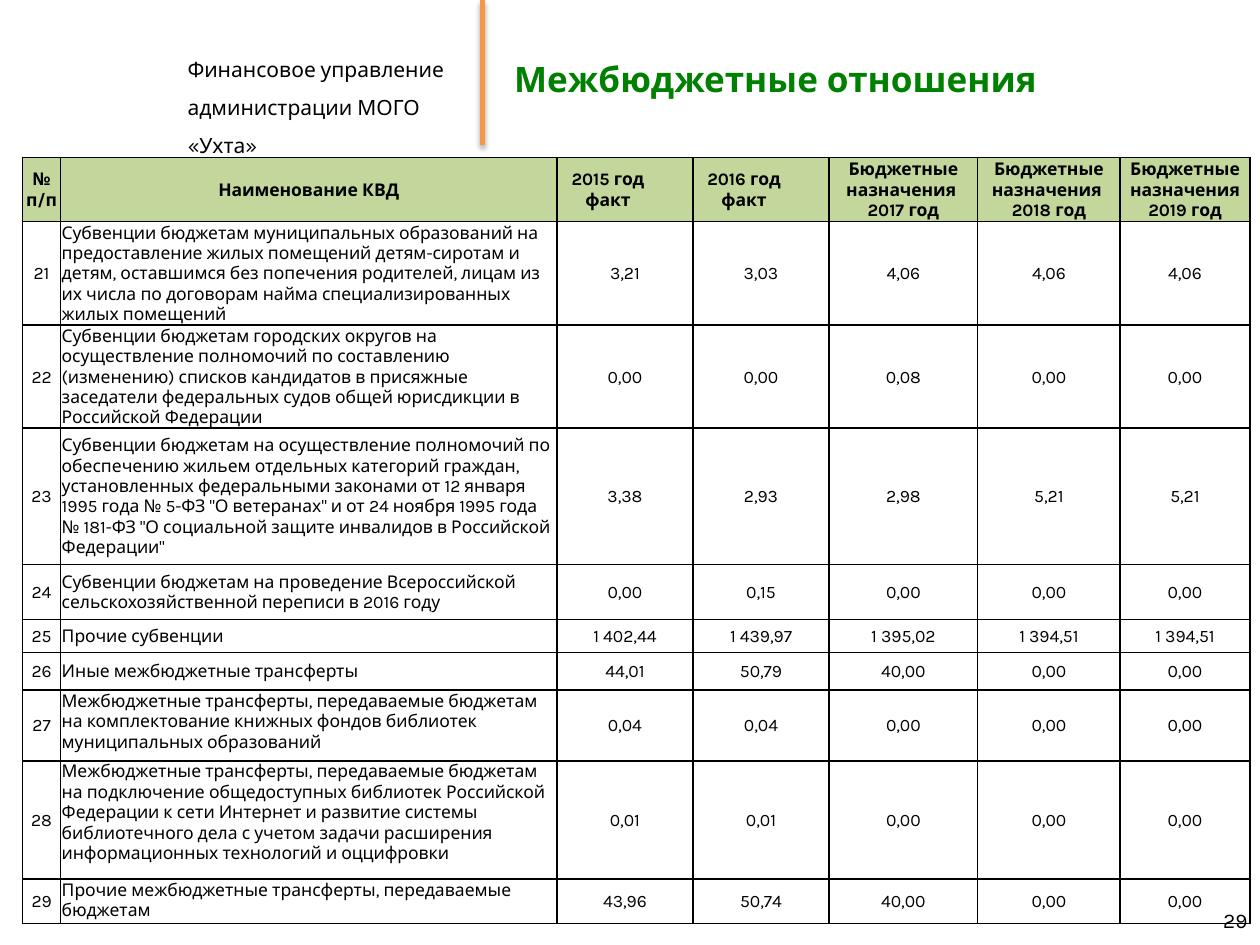
from lxml import etree
from pptx import Presentation
from pptx.dml.color import RGBColor
from pptx.enum.shapes import MSO_CONNECTOR
from pptx.enum.text import MSO_ANCHOR, MSO_AUTO_SIZE, PP_ALIGN
from pptx.oxml import parse_xml
from pptx.oxml.ns import nsdecls, qn
from pptx.util import Inches, Pt

FONT = "Karla"
COLORS = {"text": "000000", "title": "008000", "accent": "F79646",
          "header": "C3D69B", "border": "000000"}

COLUMN_WIDTHS = [0.3, 3.94, 1.08, 1.08, 1.18, 1.13, 1.03]
ROW_HEIGHTS = [0.51, 0.75, 0.79, 1.08, 0.44, 0.26, 0.3, 0.56, 0.94, 0.35]
HEADERS = [
    ["№ п/п"],
    ["Наименование КВД"],
    ["2015 год", "факт"],
    ["2016 год", "факт"],
    ["Бюджетные назначения ", "2017 год"],
    ["Бюджетные назначения ", "2018 год"],
    ["Бюджетные назначения 2019 год"],
]
FACT_COLUMNS = (2, 3)
FIRST_NUMBER = 21
FIRST_TOP_ANCHORED = 27
ROWS = [
    ("Субвенции бюджетам муниципальных образований на предоставление жилых "
     "помещений детям-сиротам и детям, оставшимся без попечения родителей, "
     "лицам из их числа по договорам найма специализированных жилых помещений",
     ["3,21", "3,03", "4,06", "4,06", "4,06"]),
    ("Субвенции бюджетам городских округов на осуществление полномочий по "
     "составлению (изменению) списков кандидатов в присяжные заседатели "
     "федеральных судов общей юрисдикции в Российской Федерации",
     ["0,00", "0,00", "0,08", "0,00", "0,00"]),
    ("Субвенции бюджетам на осуществление полномочий по обеспечению жильем "
     "отдельных категорий граждан, установленных федеральными законами от "
     "12 января 1995 года № 5-ФЗ \"О ветеранах\" и от 24 ноября 1995 года "
     "№ 181-ФЗ \"О социальной защите инвалидов в Российской Федерации\"",
     ["3,38", "2,93", "2,98", "5,21", "5,21"]),
    ("Субвенции бюджетам на проведение Всероссийской сельскохозяйственной "
     "переписи в 2016 году",
     ["0,00", "0,15", "0,00", "0,00", "0,00"]),
    ("Прочие субвенции",
     ["1 402,44", "1 439,97", "1 395,02", "1 394,51", "1 394,51"]),
    ("Иные межбюджетные трансферты",
     ["44,01", "50,79", "40,00", "0,00", "0,00"]),
    ("Межбюджетные трансферты, передаваемые бюджетам на комплектование "
     "книжных фондов библиотек муниципальных образований",
     ["0,04", "0,04", "0,00", "0,00", "0,00"]),
    ("Межбюджетные трансферты, передаваемые бюджетам на подключение "
     "общедоступных библиотек Российской Федерации к сети Интернет и развитие "
     "системы библиотечного дела с учетом задачи расширения информационных "
     "технологий и оццифровки",
     ["0,01", "0,01", "0,00", "0,00", "0,00"]),
    ("Прочие межбюджетные трансферты, передаваемые бюджетам",
     ["43,96", "50,74", "40,00", "0,00", "0,00"]),
]


def write(frame, lines, size, color="text", bold=False,
          align=PP_ALIGN.LEFT, spacing=None):
    for index, line in enumerate(lines):
        para = frame.paragraphs[0] if index == 0 else frame.add_paragraph()
        para.alignment = align
        if spacing:
            para.line_spacing = spacing
        span = para.add_run()
        span.text = line
        span.font.name = FONT
        span.font.size = Pt(size)
        span.font.bold = bold
        span.font.color.rgb = RGBColor.from_string(COLORS[color])


def add_text(page, left, top, width, height, lines, anchor, **style):
    box = page.shapes.add_textbox(Inches(left), Inches(top),
                                  Inches(width), Inches(height))
    frame = box.text_frame
    frame.word_wrap = True
    frame.auto_size = MSO_AUTO_SIZE.NONE
    frame.vertical_anchor = anchor
    write(frame, lines, 12, **style)


def add_divider(page, left, top, height):
    line = page.shapes.add_connector(
        MSO_CONNECTOR.STRAIGHT, Inches(left), Inches(top),
        Inches(left), Inches(top + height))
    line.line.color.rgb = RGBColor.from_string(COLORS["accent"])
    line.line.width = Pt(3)
    line._element.spPr.append(parse_xml(
        f'<a:effectLst {nsdecls("a")}>'
        f'<a:outerShdw blurRad="{Pt(3.1)}" dist="{Pt(1.8)}" dir="5400000" '
        'rotWithShape="0"><a:srgbClr val="000000"><a:alpha val="35000"/>'
        '</a:srgbClr></a:outerShdw></a:effectLst>'))


def add_title(page, left, top, width, height):
    title = page.shapes.title
    title.left, title.top = Inches(left), Inches(top)
    title.width, title.height = Inches(width), Inches(height)
    frame = title.text_frame
    frame.word_wrap = True
    frame.auto_size = MSO_AUTO_SIZE.NONE
    frame.vertical_anchor = MSO_ANCHOR.MIDDLE
    write(frame, ["Межбюджетные отношения"], 20, color="title", bold=True,
          spacing=1.7)


def add_borders(cell):
    properties = cell._tc.get_or_add_tcPr()
    for index, side in enumerate(("lnL", "lnR", "lnT", "lnB")):
        edge = etree.Element(qn(f"a:{side}"), w=str(Pt(1)))
        fill = etree.SubElement(edge, qn("a:solidFill"))
        etree.SubElement(fill, qn("a:srgbClr"), val=COLORS["border"])
        properties.insert(index, edge)


def fill_cell(cell, lines, header=False, align=PP_ALIGN.CENTER,
              anchor=MSO_ANCHOR.MIDDLE):
    cell.margin_left = cell.margin_right = cell.margin_top = Inches(0.01)
    cell.margin_bottom = 0
    cell.vertical_anchor = anchor
    if header:
        cell.fill.solid()
        cell.fill.fore_color.rgb = RGBColor.from_string(COLORS["header"])
    else:
        cell.fill.background()
    add_borders(cell)
    write(cell.text_frame, lines, 10, bold=header, align=align)


def add_budget_table(page, left, top):
    table = page.shapes.add_table(
        len(ROW_HEIGHTS), len(COLUMN_WIDTHS), Inches(left), Inches(top),
        Inches(sum(COLUMN_WIDTHS)), Inches(sum(ROW_HEIGHTS))).table
    table.horz_banding = False
    for column, width in zip(table.columns, COLUMN_WIDTHS):
        column.width = Inches(width)
    for row, height in zip(table.rows, ROW_HEIGHTS):
        row.height = Inches(height)

    # Header row, with the years of the fact columns set off to the left
    for index, lines in enumerate(HEADERS):
        fill_cell(table.cell(0, index), lines, header=True)
    for index in FACT_COLUMNS:
        year = table.cell(0, index).text_frame.paragraphs[0]
        year._p.get_or_add_pPr().set("marR", str(Inches(0.27)))

    # Numbered rows
    for index, (name, values) in enumerate(ROWS, start=1):
        number = FIRST_NUMBER + index - 1
        anchor = (MSO_ANCHOR.TOP if number >= FIRST_TOP_ANCHORED
                  else MSO_ANCHOR.MIDDLE)
        fill_cell(table.cell(index, 0), [str(number)])
        fill_cell(table.cell(index, 1), [name], align=PP_ALIGN.LEFT,
                  anchor=anchor)
        for column, value in enumerate(values, start=2):
            fill_cell(table.cell(index, column), [value])


def main():
    deck = Presentation()
    deck.slide_width, deck.slide_height = Inches(10), Inches(7.5)
    page = deck.slides.add_slide(deck.slide_layouts[5])

    # Heading band
    add_text(page, 1.39, 0.3, 2.5, 0.66,
             ["Финансовое управление", "администрации МОГО «Ухта»"],
             MSO_ANCHOR.TOP, spacing=1.5)
    add_divider(page, 3.83, 0, 1.15)
    add_title(page, 3.98, 0, 4.88, 1.01)

    # Page number and table
    add_text(page, 7.67, 7.1, 2.33, 0.4, ["29"], MSO_ANCHOR.MIDDLE,
             align=PP_ALIGN.RIGHT)
    add_budget_table(page, 0.18, 1.25)
    deck.save("out.pptx")


if __name__ == "__main__":
    main()
